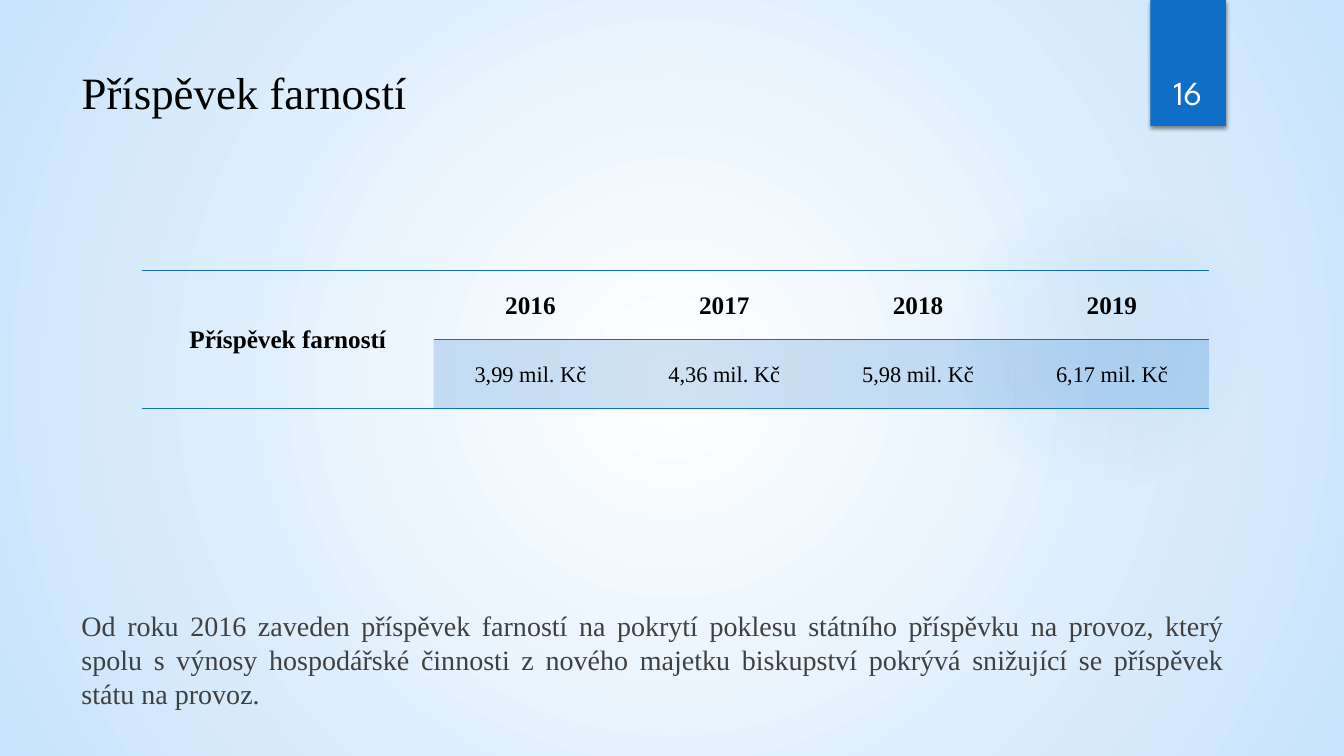
from lxml import etree
from pptx import Presentation
from pptx import util as u
from pptx.dml.color import RGBColor
from pptx.enum import shapes, text
from pptx.oxml.ns import nsdecls, qn

COLORS = {"accent": "0F6FC6", "glow": "448AD7", "sky": "C8E3FB", "white": "FFFFFF",
          "black": "000000", "body": "404040"}
SERIF = "Times New Roman"
WIDTH, HEIGHT = u.Inches(13.33), u.Inches(7.5)
NO_STYLE = "{2D5ABB26-0587-4C30-8999-92F81FD0307C}"
YEARS = ["2016", "2017", "2018", "2019"]
AMOUNTS = ["3,99 mil. Kč", "4,36 mil. Kč", "5,98 mil. Kč", "6,17 mil. Kč"]
NOTE = ("Od roku 2016 zaveden příspěvek farností na pokrytí poklesu státního příspěvku na provoz, "
        "který spolu s výnosy hospodářské činnosti z nového majetku biskupství pokrývá snižující se "
        "příspěvek státu na provoz.")


def inches(*lengths):
    """Convert lengths in inches to slide units."""
    return [u.Inches(length) for length in lengths]


def radial_gradient(stops):
    """Build a centred radial fill from (position %, colour, opacity %) stops."""
    marks = "".join(
        f'<a:gs pos="{position * 1000}"><a:srgbClr val="{COLORS[color]}">'
        f'<a:alpha val="{opacity * 1000}"/></a:srgbClr></a:gs>'
        for position, color, opacity in stops)
    return etree.fromstring(
        f'<a:gradFill {nsdecls("a")} rotWithShape="1"><a:gsLst>{marks}</a:gsLst><a:path path="circle">'
        '<a:fillToRect l="50000" t="50000" r="50000" b="50000"/></a:path></a:gradFill>')


def replace_solid(parent, fill):
    """Swap the solid fill of an element for another fill."""
    parent.replace(parent.find(qn("a:solidFill")), fill)


def write(frame, words, size, color, align, font=SERIF, bold=False, anchor=text.MSO_ANCHOR.TOP):
    """Write one formatted run in a text frame and return its paragraph."""
    frame.word_wrap = True
    frame.vertical_anchor = anchor
    paragraph = frame.paragraphs[0]
    paragraph.alignment = align
    run = paragraph.add_run()
    run.text = words
    run.font.size, run.font.name, run.font.bold = u.Pt(size), font, bold
    run.font.color.rgb = RGBColor.from_string(COLORS[color])
    return paragraph


def add_plain_shape(slide, kind, box, color):
    """Add a filled shape without outline or shadow."""
    shape = slide.shapes.add_shape(kind, *inches(*box))
    shape.shadow.inherit = False
    shape.line.fill.background()
    shape.fill.solid()
    shape.fill.fore_color.rgb = RGBColor.from_string(COLORS[color])
    return shape


def draw_backdrop(slide):
    """Paint the radial background and the soft glow."""
    slide.background.fill.solid()
    replace_solid(slide._element.find(".//" + qn("p:bgPr")),
                  radial_gradient([(0, "white", 100), (100, "sky", 100)]))
    glow = add_plain_shape(slide, shapes.MSO_SHAPE.OVAL, (9.41, 1.83, 3.08, 3.08), "glow")
    replace_solid(glow._element.spPr,
                  radial_gradient([(0, "glow", 7), (36, "glow", 6), (69, "glow", 0)]))


def draw_page_tab(slide, left, height):
    """Draw the page ribbon with its number and drop shadow."""
    ribbon = add_plain_shape(slide, shapes.MSO_SHAPE.RECTANGLE, (left, 0, 0.75, height), "accent")
    ribbon._element.spPr.find(qn("a:effectLst")).append(etree.fromstring(
        f'<a:outerShdw {nsdecls("a")} blurRad="{u.Pt(3)}" dist="{u.Pt(2)}" dir="5400000" '
        f'rotWithShape="0"><a:srgbClr val="{COLORS["black"]}"><a:alpha val="45000"/>'
        '</a:srgbClr></a:outerShdw>'))
    number = slide.shapes.add_textbox(*inches(left - 0.09, 0.32, 0.92, height - 0.41))
    write(number.text_frame, "16", 24, "white", text.PP_ALIGN.CENTER,
          font="League Spartan", anchor=text.MSO_ANCHOR.BOTTOM)


def draw_title(slide, box):
    """Place and format the title."""
    title = slide.shapes.title
    title.left, title.top, title.width, title.height = inches(*box)
    write(title.text_frame, "Příspěvek farností", 32, "black", text.PP_ALIGN.LEFT)


def add_border(cell, sides):
    """Rule the given sides (T, B) of a cell."""
    for index, side in enumerate(sides):
        cell._tc.get_or_add_tcPr().insert(index, etree.fromstring(
            f'<a:ln{side} {nsdecls("a")} w="{u.Pt(1)}"><a:solidFill>'
            f'<a:srgbClr val="{COLORS["accent"]}"/></a:solidFill></a:ln{side}>'))


def write_cell(cell, words, size, bold):
    """Write a centred table entry."""
    cell.margin_left = cell.margin_right = u.Inches(0.05)
    cell.margin_top = cell.margin_bottom = 0
    cell.vertical_anchor = text.MSO_ANCHOR.MIDDLE
    paragraph = cell.text_frame.paragraphs[0]
    paragraph.alignment = text.PP_ALIGN.CENTER
    paragraph.line_spacing = 1.07
    run = paragraph.add_run()
    run.text = words
    run.font.size, run.font.name, run.font.bold = u.Pt(size), SERIF, bold
    run.font.color.rgb = RGBColor.from_string(COLORS["black"])


def draw_contributions(slide, box, label_width):
    """Draw the table of yearly contributions beside its merged label."""
    frame = slide.shapes.add_table(2, len(YEARS) + 1, *inches(*box))
    table = frame.table
    table.first_row = table.horz_banding = False
    table._tbl.tblPr.find(qn("a:tableStyleId")).text = NO_STYLE
    table.columns[0].width = u.Inches(label_width)
    for column in range(1, len(YEARS) + 1):
        table.columns[column].width = u.Inches((box[2] - label_width) / len(YEARS))
    for row in table.rows:
        row.height = u.Inches(box[3] / 2)
    label = table.cell(0, 0)
    label.merge(table.cell(1, 0))
    write_cell(label, "Příspěvek farností", 18, True)
    for column, (year, amount) in enumerate(zip(YEARS, AMOUNTS), start=1):
        write_cell(table.cell(0, column), year, 18, True)
        value = table.cell(1, column)
        write_cell(value, amount, 16, False)
        value.fill.solid()
        value.fill.fore_color.rgb = RGBColor.from_string(COLORS["accent"])
        tint = value._tc.tcPr.find(".//" + qn("a:srgbClr"))
        etree.SubElement(tint, qn("a:alpha"), val="20000")
    for column in range(len(YEARS) + 1):
        add_border(table.cell(0, column), "TB")
        add_border(table.cell(1, column), "TB" if column else "B")


def draw_note(slide, box):
    """Add the justified explanation below the table."""
    note = slide.shapes.add_textbox(*inches(*box))
    write(note.text_frame, NOTE, 20, "body", text.PP_ALIGN.JUSTIFY)


def main():
    """Build the slide and save it."""
    deck = Presentation()
    deck.slide_width, deck.slide_height = WIDTH, HEIGHT
    slide = deck.slides.add_slide(deck.slide_layouts[5])
    draw_backdrop(slide)
    draw_title(slide, (0.71, 0.59, 10.29, 1.53))
    draw_contributions(slide, (1.41, 2.68, 10.58, 1.37), 2.89)
    draw_page_tab(slide, 11.41, 1.25)
    draw_note(slide, (0.71, 5.99, 11.53, 1.11))
    deck.save("out.pptx")


if __name__ == "__main__":
    main()
